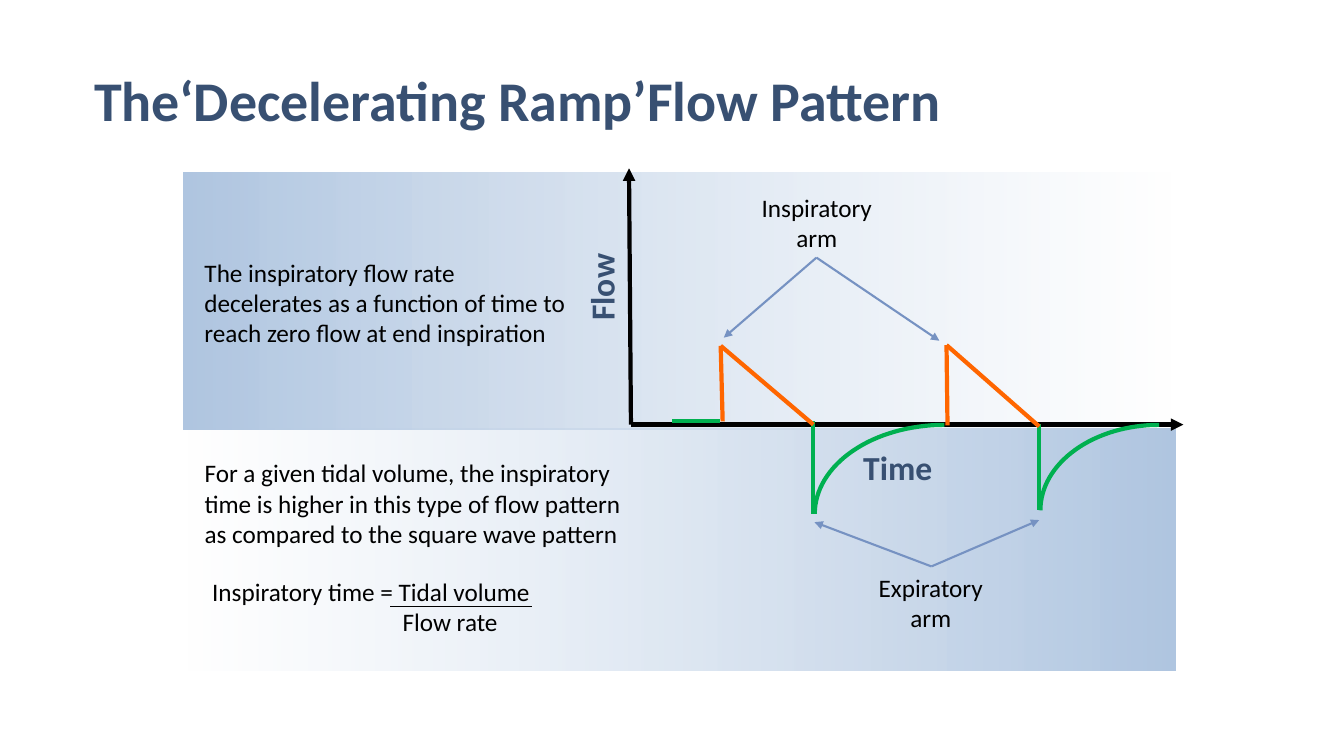
"""Build a slide on the decelerating ramp flow pattern."""
from math import cos, pi, sin

from pptx import Presentation
from pptx.dml.color import RGBColor
from pptx.enum.shapes import MSO_CONNECTOR, MSO_SHAPE
from pptx.enum.text import MSO_ANCHOR as Anchor, PP_ALIGN as Align
from pptx.oxml.ns import qn
from pptx.util import Pt
from lxml.etree import SubElement

NAVY = RGBColor(0x38, 0x50, 0x72)
BLACK = RGBColor(0, 0, 0)
PANEL = RGBColor(0xB0, 0xC6, 0xE1)
PANEL_FADE = RGBColor(0xCA, 0xD9, 0xEB)
GREEN = RGBColor(0x00, 0xB0, 0x50)
ORANGE = RGBColor(0xFF, 0x66, 0x00)
POINTER = RGBColor(0x76, 0x92, 0xC2)
FONT = "Calibri"


def style(paragraph, size, color, bold=False, align=None):
    """Set the font and alignment of a paragraph."""
    font = paragraph.font
    font.name, font.size, font.bold = FONT, Pt(size), bold
    font.color.rgb = color
    paragraph.alignment = align


def write(shape, text, size=18, color=BLACK, bold=False, align=Align.CENTER,
          anchor=Anchor.MIDDLE, wrap=False):
    """Fill a shape with text, one paragraph per line."""
    frame = shape.text_frame
    frame.text = text
    frame.word_wrap = wrap
    frame.vertical_anchor = anchor
    for paragraph in frame.paragraphs:
        style(paragraph, size, color, bold, align)


def add_text(slide, box, text, **look):
    """Add a text box."""
    label = slide.shapes.add_textbox(*map(Pt, box))
    write(label, text, **look)
    return label


def add_panel(slide, box, angle):
    """Add a rectangle that fades out along the given angle."""
    panel = slide.shapes.add_shape(MSO_SHAPE.RECTANGLE, *map(Pt, box))
    panel.shadow.inherit = False
    panel.line.fill.background()
    panel.fill.gradient()
    panel.fill.gradient_angle = angle
    solid, faded = panel.fill.gradient_stops
    solid.color.rgb, solid.position = PANEL, 0
    faded.color.rgb, faded.position = PANEL_FADE, 1
    faded_color = panel.element.spPr.findall(".//" + qn("a:srgbClr"))[-1]
    SubElement(faded_color, qn("a:alpha")).set("val", "0")


def add_line(slide, start, end, color, width=3, arrow=False):
    """Add a straight line, with an arrowhead at its end if wanted."""
    line = slide.shapes.add_connector(
        MSO_CONNECTOR.STRAIGHT, *map(Pt, start + end))
    line.line.color.rgb = color
    line.line.width = Pt(width)
    if arrow:
        SubElement(line.line._get_or_add_ln(), qn("a:tailEnd")).set("type", "triangle")
    SubElement(line.element.spPr, qn("a:effectLst"))


def add_expiratory_curve(slide, trough, end, steps=32):
    """Add a quarter ellipse that rises from the trough to the baseline."""
    width, height = end[0] - trough[0], trough[1] - end[1]
    turns = [pi / 2 * step / steps for step in range(steps + 1)]
    points = [(Pt(end[0] - width * cos(turn)), Pt(trough[1] - height * sin(turn)))
              for turn in turns]
    builder = slide.shapes.build_freeform(*points[0])
    builder.add_line_segments(points[1:], close=False)
    curve = builder.convert_to_shape()
    curve.shadow.inherit = False
    curve.fill.background()
    curve.line.color.rgb = GREEN
    curve.line.width = Pt(3)


def add_arm(slide, box, text, apex, targets):
    """Add a label and the arrows from its apex to the waveform."""
    label = slide.shapes.add_shape(MSO_SHAPE.OVAL, *map(Pt, box))
    label.shadow.inherit = False
    label.fill.background()
    label.line.fill.background()
    write(label, text)
    for target in targets:
        add_line(slide, apex, target, POINTER, 1.5, arrow=True)


def add_title(slide, text):
    """Place and format the slide title."""
    title = slide.shapes.title
    title.left, title.top, title.width, title.height = map(Pt, (60, 31, 822, 68.4))
    write(title, text, 40, NAVY, True, Align.LEFT, Anchor.BOTTOM, True)
    title.text_frame.paragraphs[0].line_spacing = 0.9


def add_formula(slide):
    """Add the inspiratory time formula with its fraction bar."""
    formula = add_text(slide, (115, 403.2, 300, 60),
                       "Inspiratory time = Tidal volume\nFlow rate")
    formula.text_frame.paragraphs[1]._p.get_or_add_pPr().set("marL", str(Pt(113)))
    add_line(slide, (278.6, 433.4), (380.2, 433.4), BLACK, 0.75)


def main():
    """Build and save the slide."""
    deck = Presentation()
    deck.slide_width, deck.slide_height = Pt(960), Pt(540)
    slide = deck.slides.add_slide(deck.slide_layouts[5])
    add_title(slide, "The‘Decelerating Ramp’Flow Pattern")

    add_panel(slide, (130.5, 306, 709, 173), 180)
    add_panel(slide, (131, 123, 709, 183.5), 0)

    origin = (450.7, 303.3)
    for axis_end in ((845.3, 303.3), (449.3, 120.2)):
        add_line(slide, origin, axis_end, BLACK, arrow=True)
    add_text(slide, (596.2, 320.4, 90, 26), "Time", size=24, color=NAVY, bold=True)
    flow = add_text(slide, (396.7, 190.8, 65.5, 28.8), "Flow", size=24, color=NAVY, bold=True)
    flow.rotation = 270

    add_line(slide, (480.2, 301), (514, 301), GREEN)
    breaths = (
        ((516.2, 301), (514.8, 247), (581, 303.3), (581, 301), (582, 367), (674.6, 303.5)),
        ((676.8, 303.8), (676.1, 246.5), (742.3, 304.6), (742.3, 303.1),
         (743.2, 364.5), (828, 303.5)),
    )
    for onset, peak, zero, drop, trough, end in breaths:
        add_expiratory_curve(slide, trough, end)
        add_line(slide, drop, (drop[0], trough[1]), GREEN)
        add_line(slide, onset, peak, ORANGE)
        add_line(slide, peak, zero, ORANGE)

    add_arm(slide, (523.4, 134.6, 120.2, 48.2), "Inspiratory\narm",
            (583.2, 184), ((517, 241.2), (671, 243.4)))
    add_arm(slide, (604.8, 406, 120.2, 48.2), "Expiratory\narm",
            (665.3, 404.6), ((581.8, 373), (742.3, 371.5)))

    add_formula(slide)
    notes = (
        ((139, 323.3, 322.6, 72.7), "For a given tidal volume, the inspiratory time is higher "
         "in this type of flow pattern as compared to the square wave pattern"),
        ((139, 180, 276.5, 72.7), "The inspiratory flow rate decelerates as a function of "
         "time to reach zero flow at end inspiration"),
    )
    for box, text in notes:
        add_text(slide, box, text, align=Align.LEFT, anchor=Anchor.TOP, wrap=True)

    deck.save("out.pptx")


if __name__ == "__main__":
    main()
